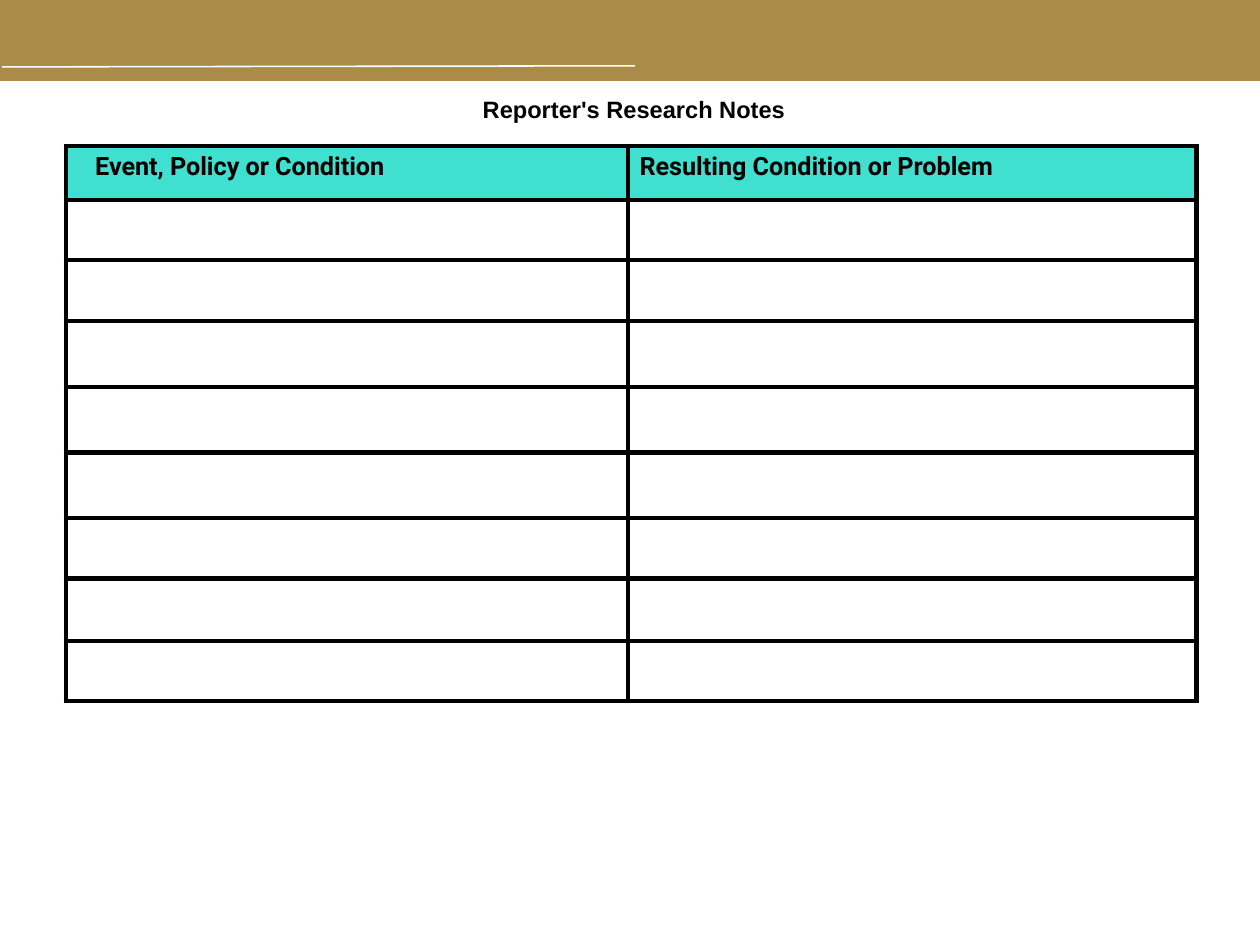
from lxml import etree
from pptx import Presentation
from pptx.dml.color import RGBColor
from pptx.enum.shapes import MSO_CONNECTOR, MSO_SHAPE
from pptx.enum.text import PP_ALIGN
from pptx.oxml.ns import qn
from pptx.util import Inches, Pt

GOLD = RGBColor(0xAA, 0x8B, 0x48)
GOLD_EDGE = RGBColor(0xAA, 0x8B, 0x49)
TURQUOISE = RGBColor(0x40, 0xE0, 0xD0)
BLACK = RGBColor(0, 0, 0)
WHITE = RGBColor(0xFF, 0xFF, 0xFF)

PAGE_WIDTH, PAGE_HEIGHT = 11.11, 8.33
HEADINGS = ["Event, Policy or Condition", "Resulting Condition or Problem"]
HEADING_INSETS = [0.26, 0.1]
COLUMN_WIDTHS = [4.96, 5.01]
ROW_HEIGHTS = [0.47, 0.53, 0.54, 0.58, 0.58, 0.58, 0.53, 0.55, 0.53]


def write_text(frame, text, font="Arial", size=15, color=BLACK, bold=True,
               align=PP_ALIGN.LEFT):
    para = frame.paragraphs[0]
    para.alignment = align
    span = para.add_run()
    span.text = text
    span.font.name = font
    span.font.size = Pt(size)
    span.font.bold = bold
    span.font.color.rgb = color


def add_banner(page):
    band = page.shapes.add_shape(MSO_SHAPE.RECTANGLE, 0, 0,
                                 Inches(PAGE_WIDTH), Inches(0.69))
    band.shadow.inherit = False
    band.fill.solid()
    band.fill.fore_color.rgb = GOLD
    band.line.color.rgb = GOLD_EDGE
    band.line.width = Pt(3)


def add_rule(page):
    rule = page.shapes.add_connector(MSO_CONNECTOR.STRAIGHT, Inches(0.02), Inches(0.59),
                                     Inches(5.6), Inches(0.58))
    rule.line.color.rgb = WHITE
    rule.line.width = Pt(1)
    etree.SubElement(rule._element.spPr, qn("a:effectLst"))


def add_title(page):
    box = page.shapes.add_textbox(Inches(0.81), Inches(0.79), Inches(9.56), Inches(0.35))
    box.text_frame.word_wrap = True
    write_text(box.text_frame, "Reporter's Research Notes", align=PP_ALIGN.CENTER)


def set_borders(cell, color=BLACK, width=3):
    """Draw all four sides; borders must come before the fill in the cell XML."""
    properties = cell._tc.get_or_add_tcPr()
    for side in ("lnL", "lnR", "lnT", "lnB"):
        border = etree.SubElement(properties, qn(f"a:{side}"), w=str(Pt(width)))
        fill = etree.SubElement(border, qn("a:solidFill"))
        etree.SubElement(fill, qn("a:srgbClr"), val=str(color))


def add_notes_table(page):
    table = page.shapes.add_table(
        len(ROW_HEIGHTS), len(COLUMN_WIDTHS), Inches(0.58), Inches(1.29),
        Inches(sum(COLUMN_WIDTHS)), Inches(sum(ROW_HEIGHTS))).table
    for column, width in zip(table.columns, COLUMN_WIDTHS):
        column.width = Inches(width)
    for row, height in zip(table.rows, ROW_HEIGHTS):
        row.height = Inches(height)
    for cell in table.iter_cells():
        set_borders(cell)
        cell.fill.solid()
        cell.fill.fore_color.rgb = WHITE
    for cell, heading, inset in zip(table.rows[0].cells, HEADINGS, HEADING_INSETS):
        cell.fill.fore_color.rgb = TURQUOISE
        cell.margin_left = Inches(inset)
        write_text(cell.text_frame, heading, font="Roboto", size=16)


def main():
    deck = Presentation()
    deck.slide_width = Inches(PAGE_WIDTH)
    deck.slide_height = Inches(PAGE_HEIGHT)
    page = deck.slides.add_slide(deck.slide_layouts[6])
    add_banner(page)
    add_rule(page)
    add_notes_table(page)
    add_title(page)
    deck.save("out.pptx")


if __name__ == "__main__":
    main()
